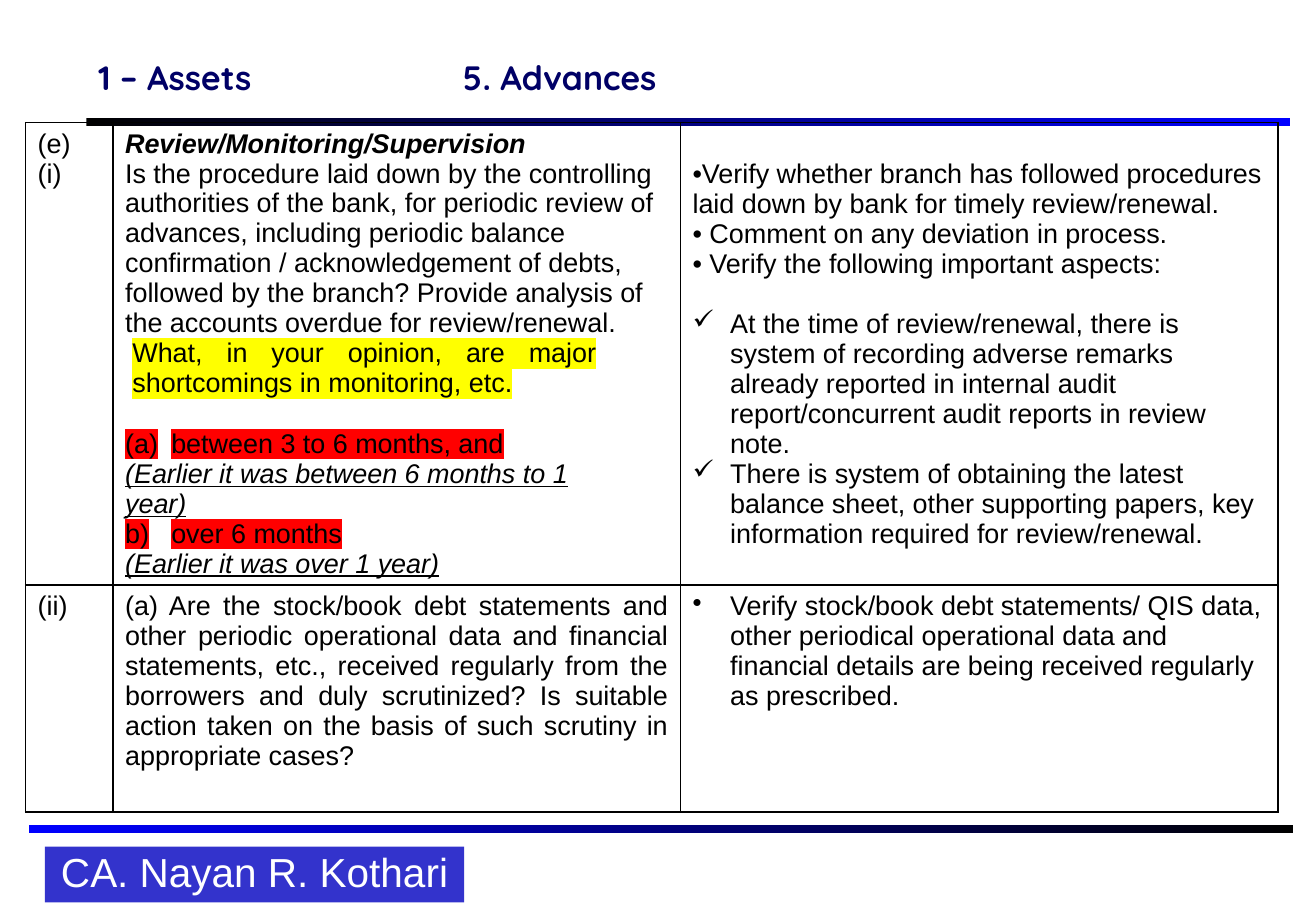
from dataclasses import dataclass, field
from typing import Any

from lxml.etree import SubElement
from pptx import Presentation
from pptx.dml.color import RGBColor as RGB
from pptx.enum.shapes import MSO_CONNECTOR as Connector, MSO_SHAPE as Shape
from pptx.enum.text import MSO_ANCHOR as Anchor, PP_ALIGN as Align
from pptx.oxml.ns import qn
from pptx.util import Inches, Pt


@dataclass(frozen=True)
class Theme:
    black: str = "000000"
    blue: str = "0000FF"
    navy: str = "000066"
    footer: str = "3333CC"
    white: str = "FFFFFF"
    yellow: str = "FFFF00"
    red: str = "FF0000"
    body_font: str = "Arial"
    title_font: str = "Quicksand"
    body_size: int = 16
    title_size: int = 20
    footer_size: int = 24
    gap: int = 18


THEME = Theme()


@dataclass(frozen=True)
class Para:
    text: str
    style: dict[str, Any] = field(default_factory=dict)
    highlight: str = ""
    bullet: tuple[str, dict[str, str]] | None = None
    indent: float = 0
    right: float = 0
    gap: int = 0
    align: Align = Align.LEFT


@dataclass(frozen=True)
class Entry:
    paras: tuple[Para, ...]
    top: float = 0.05


@dataclass(frozen=True)
class Bar:
    left: float
    top: float
    width: float
    colors: tuple[str, str]


def apply(target: Any, values: dict[str, Any]) -> None:
    for name, value in values.items():
        setattr(target, name, value)


def style_run(run: Any, face: str, size: int, color: str, **extra: Any) -> None:
    apply(run.font, {"name": face, "size": Pt(size), **extra})
    run.font.color.rgb = RGB.from_string(color)


def write_para(paragraph: Any, para: Para) -> None:
    paragraph.alignment = para.align
    if para.gap:
        paragraph.space_before = Pt(para.gap)
    props = paragraph._p.get_or_add_pPr()
    if para.indent:
        props.set("marL", str(Inches(para.indent)))
    if para.right:
        props.set("marR", str(Inches(para.right)))
    if para.bullet:
        props.set("indent", str(-Inches(para.indent)))
        tag, attributes = para.bullet
        SubElement(props, qn(tag), attributes)
    run = paragraph.add_run()
    run.text = para.text
    style_run(run, THEME.body_font, THEME.body_size, THEME.black, **para.style)
    if para.highlight:
        run_props = run._r.get_or_add_rPr()
        highlight = SubElement(run_props, qn("a:highlight"))
        SubElement(highlight, qn("a:srgbClr"), val=para.highlight)
        run_props.find(qn("a:solidFill")).addnext(highlight)


def border_cell(cell: Any) -> None:
    props = cell._tc.get_or_add_tcPr()
    for index, side in enumerate(("a:lnL", "a:lnR", "a:lnT", "a:lnB")):
        line = props.makeelement(qn(side), {"w": str(Pt(1))})
        fill = SubElement(line, qn("a:solidFill"))
        SubElement(fill, qn("a:srgbClr"), val=THEME.black)
        props.insert(index, line)


def write_cell(cell: Any, entry: Entry) -> None:
    cell.fill.background()
    border_cell(cell)
    apply(cell, {"margin_left": Inches(0.1), "margin_right": Inches(0.1),
                 "margin_top": Inches(entry.top), "vertical_anchor": Anchor.TOP})
    frame = cell.text_frame
    for index, para in enumerate(entry.paras):
        write_para(frame.add_paragraph() if index else frame.paragraphs[0], para)


def add_bar(slide: Any, bar: Bar) -> None:
    shape = slide.shapes.add_shape(Shape.RECTANGLE, Inches(bar.left), Inches(bar.top),
                                   Inches(bar.width), Inches(0.07))
    shape.shadow.inherit = False
    shape.line.fill.background()
    shape.fill.gradient()
    shape.fill.gradient_angle = 0
    for stop, color, position in zip(shape.fill.gradient_stops, bar.colors, (0, 1)):
        stop.color.rgb = RGB.from_string(color)
        stop.position = position


def add_rule(slide: Any) -> None:
    rule = slide.shapes.add_connector(Connector.STRAIGHT, Inches(0.24), Inches(6.83),
                                      Inches(10.62), Inches(6.83))
    rule.line.width = Pt(4.5)
    rule.line.color.rgb = RGB.from_string(THEME.blue)
    SubElement(rule._element.spPr, qn("a:effectLst"))


def add_footer(slide: Any) -> None:
    footer = slide.shapes.add_shape(Shape.RECTANGLE, Inches(0.37), Inches(6.97),
                                    Inches(3.45), Inches(0.46))
    footer.shadow.inherit = False
    footer.line.fill.background()
    footer.fill.solid()
    footer.fill.fore_color.rgb = RGB.from_string(THEME.footer)
    apply(footer.text_frame, {"word_wrap": False, "vertical_anchor": Anchor.MIDDLE})
    author = footer.text_frame.paragraphs[0]
    apply(author, {"alignment": Align.CENTER, "line_spacing": 0.9})
    run = author.add_run()
    run.text = "CA. Nayan R. Kothari"
    style_run(run, THEME.body_font, THEME.footer_size, THEME.white)


def write_title(slide: Any) -> None:
    title = slide.shapes.title
    apply(title, {"left": Inches(0.71), "top": Inches(0),
                  "width": Inches(9.91), "height": Inches(1.2)})
    apply(title.text_frame, {"vertical_anchor": Anchor.BOTTOM, "word_wrap": True,
                             "margin_bottom": Inches(0.4)})
    heading = title.text_frame.paragraphs[0]
    heading.alignment = Align.LEFT
    tabs = SubElement(heading._p.get_or_add_pPr(), qn("a:tabLst"))
    SubElement(tabs, qn("a:tab"), pos=str(Inches(3)), algn="l")
    run = heading.add_run()
    run.text = "1 – Assets\t5. Advances"
    style_run(run, THEME.title_font, THEME.title_size, THEME.navy, bold=True)


EARLIER = {"italic": True, "underline": True}
CHECK = ("a:buChar", {"char": "✓"})
DOT = ("a:buChar", {"char": "•"})
ITEM_A = ("a:buAutoNum", {"type": "alphaLcParenBoth"})
ITEM_B = ("a:buAutoNum", {"type": "alphaLcParenR", "startAt": "2"})
BARS = (Bar(0.71, 0.97, 9.91, (THEME.black, THEME.blue)),
        Bar(0.24, 6.79, 10.4, (THEME.blue, THEME.black)))
COLUMNS = (0.72, 4.67, 4.92)
ROWS = (3.79, 1.87)
CHECKLIST = (
    (Entry((Para("(e)"), Para("(i)"))),
     Entry((
         Para("Review/Monitoring/Supervision", {"bold": True, "italic": True}),
         Para("Is the procedure laid down by the controlling authorities of the bank, for periodic review of advances, including periodic balance confirmation / acknowledgement of debts, followed by the branch? Provide analysis of the accounts overdue for review/renewal."),
         Para("What, in your opinion, are major shortcomings in monitoring, etc.",
              highlight=THEME.yellow, indent=0.06, right=0.59, align=Align.JUSTIFY),
         Para("between 3 to 6 months, and", highlight=THEME.red, bullet=ITEM_A,
              indent=0.38, gap=THEME.gap),
         Para("(Earlier it was between 6 months to 1 year)", EARLIER),
         Para("over 6 months", highlight=THEME.red, bullet=ITEM_B, indent=0.38),
         Para("(Earlier it was over 1 year)", EARLIER))),
     Entry((
         Para("•Verify whether branch has followed procedures laid down by bank for timely review/renewal."),
         Para("• Comment on any deviation in process."),
         Para("• Verify the following important aspects:"),
         Para("At the time of review/renewal, there is system of recording adverse remarks already reported in internal audit report/concurrent audit reports in review note.",
              bullet=CHECK, indent=0.31, gap=THEME.gap),
         Para("There is system of obtaining the latest balance sheet, other supporting papers, key information required for review/renewal.",
              bullet=CHECK, indent=0.31)), top=0.3)),
    (Entry((Para("(ii)"),)),
     Entry((Para("(a) Are the stock/book debt statements and other periodic operational data and financial statements, etc., received regularly from the borrowers and duly scrutinized? Is suitable action taken on the basis of such scrutiny in appropriate cases?",
                 align=Align.JUSTIFY),)),
     Entry((Para("Verify stock/book debt statements/ QIS data, other periodical operational data and financial details are being received regularly as prescribed.",
                 bullet=DOT, indent=0.31),))),
)


def add_checklist(slide: Any) -> None:
    table = slide.shapes.add_table(len(ROWS), len(COLUMNS), Inches(0.21), Inches(1.01),
                                   Inches(sum(COLUMNS)), Inches(sum(ROWS))).table
    apply(table, {"first_row": False, "horz_banding": False})
    for column, width in zip(table.columns, COLUMNS):
        column.width = Inches(width)
    for row, height, entries in zip(table.rows, ROWS, CHECKLIST):
        row.height = Inches(height)
        for cell, entry in zip(row.cells, entries):
            write_cell(cell, entry)


def main() -> None:
    deck = Presentation()
    apply(deck, {"slide_width": Inches(10.83), "slide_height": Inches(7.5)})
    slide = deck.slides.add_slide(deck.slide_layouts[5])
    write_title(slide)
    add_rule(slide)
    for bar in BARS:
        add_bar(slide, bar)
    add_footer(slide)
    add_checklist(slide)
    deck.save("out.pptx")


if __name__ == "__main__":
    main()
